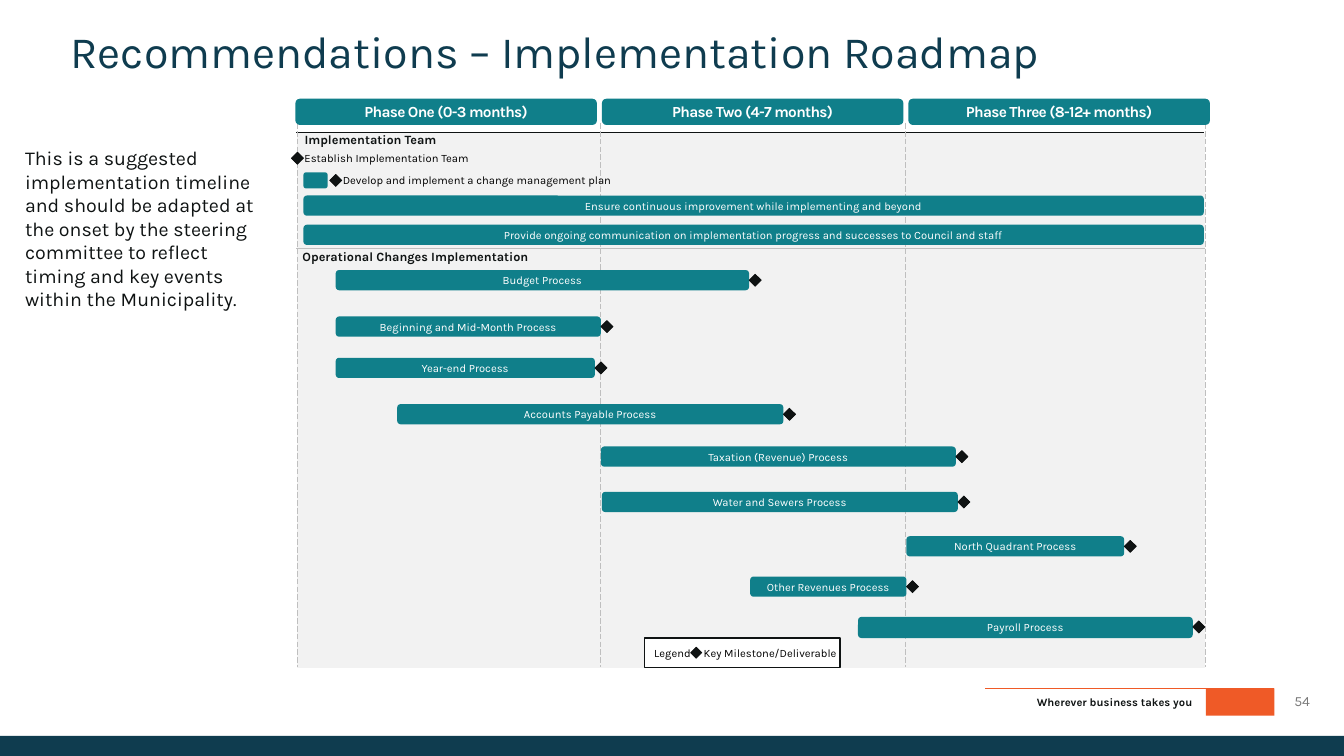
from lxml.etree import SubElement
from pptx import Presentation
from pptx.dml.color import RGBColor
from pptx.enum.dml import MSO_LINE
from pptx.enum.shapes import MSO_CONNECTOR, MSO_SHAPE
from pptx.enum.text import MSO_ANCHOR, PP_ALIGN
from pptx.oxml.ns import qn
from pptx.util import Pt

SCALE = 9144  # EMU per px, 100 px to the inch

NAVY = RGBColor(0x0F, 0x3C, 0x4F)
TEAL = RGBColor(0x10, 0x7F, 0x8A)
ORANGE = RGBColor(0xEF, 0x5A, 0x27)
INK = RGBColor(0x0F, 0x13, 0x13)
EDGE = RGBColor(0x0B, 0x0E, 0x0E)
BLACK = RGBColor(0, 0, 0)
WHITE = RGBColor(0xFF, 0xFF, 0xFF)
PALE = RGBColor(0xF2, 0xF2, 0xF2)
SILVER = RGBColor(0xBF, 0xBF, 0xBF)
GREY = RGBColor(0x79, 0x79, 0x79)

LEFT, MID, RIGHT = PP_ALIGN.LEFT, PP_ALIGN.CENTER, PP_ALIGN.RIGHT

# Text formats: size, colour and weight
TITLE = {"size": 32, "color": NAVY}
BODY = {"size": 14, "color": INK}
PHASE = {"size": 11, "color": WHITE, "bold": True}
HEAD = {"size": 9, "color": INK, "bold": True}
TASK = {"size": 8, "color": WHITE}
LABEL = {"size": 8, "color": BLACK}
FOOT = {"size": 8, "color": INK, "bold": True}
PAGE = {"size": 10, "color": GREY}

PHASES = ["Phase One (0-3 months)", "Phase Two (4-7 months)",
          "Phase Three (8-12+ months)"]

# Left, top, width, height and name of each process
TASKS = [
    (333, 268, 410, 20, "Budget Process"),
    (333, 314, 263, 20, "Beginning and Mid-Month Process"),
    (333, 355, 257, 20, "Year-end Process"),
    (394, 401, 383, 20, "Accounts Payable Process"),
    (596, 443, 352, 20, "Taxation (Revenue) Process"),
    (597, 488, 353, 20, "Water and Sewers Process"),
    (899, 532, 216, 20, "North Quadrant Process"),
    (744, 572, 155, 20, "Other Revenues Process"),
    (851, 612, 332, 21, "Payroll Process"),
]

# Work that runs through all phases
ONGOING = [
    (194, "Ensure continuous improvement while implementing and beyond"),
    (223, "Provide ongoing communication on implementation progress "
          "and successes to Council and staff"),
]

NOTE = ("This is a suggested implementation timeline and should be adapted "
        "at the onset by the steering committee to reflect timing and key "
        "events within the Municipality.")


def emu(*vals):
    return [val * SCALE for val in vals]


def write(shape, text, style, align=LEFT, pad=(0, 0), wrap=True,
          anchor=MSO_ANCHOR.MIDDLE, space=None, track=None):
    frame = shape.text_frame
    side, edge = emu(*pad)
    form = {"word_wrap": wrap, "vertical_anchor": anchor,
            "margin_left": side, "margin_right": side,
            "margin_top": edge, "margin_bottom": edge}
    for key, val in form.items():
        setattr(frame, key, val)
    para = frame.paragraphs[0]
    para.alignment = align
    if space:
        para.line_spacing = space
    run = para.add_run()
    run.text = text
    run.font.name = "Karla"
    for key, val in style.items():
        if key == "color":
            run.font.color.rgb = val
        else:
            setattr(run.font, key, Pt(val) if key == "size" else val)
    if track:
        run.font._element.set("spc", str(track))


def label(slide, box, text, style, **form):
    shape = slide.shapes.add_textbox(*emu(*box))
    write(shape, text, style, **form)


def block(slide, kind, box, fill, edge=None, weight=1):
    shape = slide.shapes.add_shape(kind, *emu(*box))
    shape.shadow.inherit = False
    shape.fill.solid()
    shape.fill.fore_color.rgb = fill
    if edge is None:
        shape.line.fill.background()
    else:
        shape.line.color.rgb = edge
        shape.line.width = Pt(weight)
    return shape


def rule(slide, ends, color, weight=0.5, dash=None):
    line = slide.shapes.add_connector(MSO_CONNECTOR.STRAIGHT, *emu(*ends))
    SubElement(line._element.spPr, qn("a:effectLst"))
    line.line.color.rgb = color
    line.line.width = Pt(weight)
    if dash:
        line.line.dash_style = dash


def bar(slide, box, text=None, style=TASK, track=None):
    shape = block(slide, MSO_SHAPE.ROUNDED_RECTANGLE, box, TEAL)
    if text:
        write(shape, text, style, align=MID, pad=(4, 4), track=track)


def stone(slide, left, top, text=None, size=12):
    block(slide, MSO_SHAPE.DIAMOND, (left, top, size, size), INK, EDGE, 0.5)
    if text:
        label(slide, (left + 13, top, 270, size), text, LABEL, wrap=False)


def footer(slide):
    block(slide, MSO_SHAPE.RECTANGLE, (1196, 683, 68, 27), ORANGE)
    rule(slide, (977, 683, 1264, 683), ORANGE, 1)
    block(slide, MSO_SHAPE.RECTANGLE, (0, 730, 1333, 20), NAVY)
    label(slide, (977, 684, 206, 24), "Wherever business takes you", FOOT,
          align=RIGHT, pad=(0, 5))
    label(slide, (1264, 682, 55, 27), "54", PAGE, align=MID, pad=(0, 5))


def grid(slide):
    rule(slide, (294, 131, 1194, 131), INK)
    block(slide, MSO_SHAPE.RECTANGLE, (295, 133, 899, 529), PALE, PALE)
    for left in (295, 595, 898, 1195):
        rule(slide, (left, 122, left, 662), SILVER, dash=MSO_LINE.LONG_DASH)
    rule(slide, (294, 246, 1195, 246), SILVER)
    for col, name in enumerate(PHASES):
        bar(slide, (293 + 304 * col, 98, 299, 26), name, PHASE, track=-50)


def team(slide):
    label(slide, (302, 131, 225, 15), "Implementation Team", HEAD)
    stone(slide, 289, 151, "Establish Implementation Team")
    bar(slide, (301, 171, 24, 16))
    stone(slide, 327, 173, "Develop and implement a change management plan")
    for top, name in ONGOING:
        bar(slide, (301, top, 893, 20), name)


def changes(slide):
    label(slide, (300, 247, 245, 15), "Operational Changes Implementation",
          HEAD)
    for left, top, width, height, name in TASKS:
        bar(slide, (left, top, width, height), name)
        stone(slide, left + width, top + 4)


def legend(slide):
    frame = block(slide, MSO_SHAPE.RECTANGLE, (639, 633, 194, 29), WHITE, INK)
    write(frame, "Legend", LABEL, pad=(10, 5))
    stone(slide, 685, 642, "Key Milestone/Deliverable", size=11)


def main():
    deck = Presentation()
    deck.slide_width, deck.slide_height = emu(1333, 750)
    slide = deck.slides.add_slide(deck.slide_layouts[6])

    # Title and side note
    label(slide, (70, 30, 1193, 48),
          "Recommendations – Implementation Roadmap", TITLE,
          anchor=MSO_ANCHOR.TOP, space=0.9)
    label(slide, (15, 140, 258, 175), NOTE, BODY, pad=(10, 5),
          anchor=MSO_ANCHOR.TOP)

    # Roadmap
    grid(slide)
    team(slide)
    changes(slide)
    legend(slide)

    footer(slide)
    deck.save("out.pptx")


if __name__ == "__main__":
    main()
